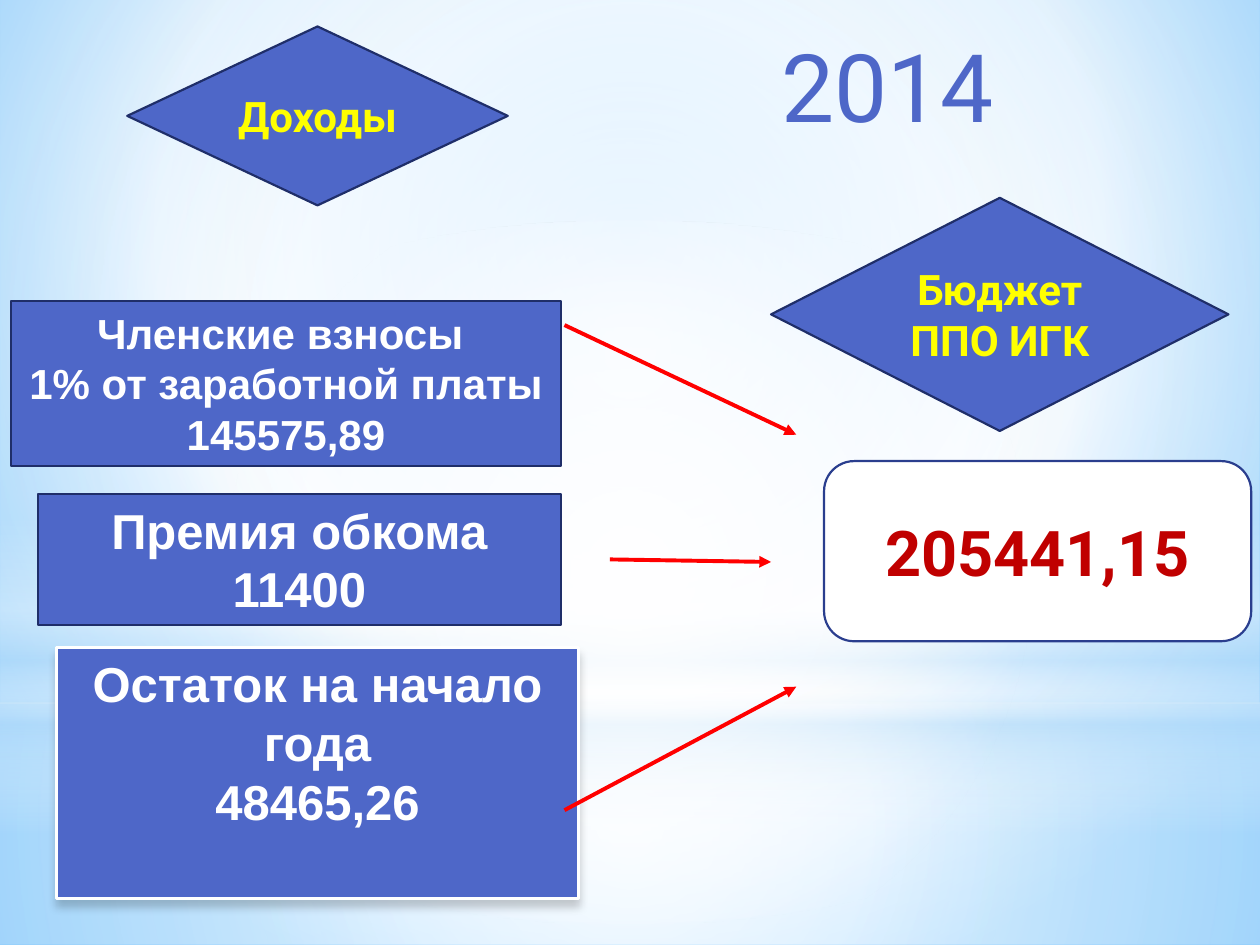
from lxml import etree
from pptx import Presentation
from pptx.dml.color import RGBColor
from pptx.enum.shapes import MSO_CONNECTOR, MSO_SHAPE as SHAPE
from pptx.enum.text import MSO_ANCHOR as ANCHOR, PP_ALIGN as ALIGN
from pptx.oxml import parse_xml
from pptx.oxml.ns import nsdecls, qn
from pptx.util import Inches, Pt

COLORS = {
    "blue": "4E67C8", "navy": "1F2E69", "edge": "2A3E8E", "white": "FFFFFF",
    "red": "FF0000", "crimson": "C00000", "yellow": "FFFF00", "black": "000000",
    "sky": "9ED5FF", "azure": "5BB9FF", "pale": "B4DCFA",
}
CENTER = (50, 50, 50, 50)

# Text formats
HEAD = dict(size=24, name="Roboto", color="yellow", bold=True)
ITEM = dict(size=28, name="Arial", color="white", bold=True)
SMALL_ITEM = {**ITEM, "size": 24}
TOTAL = dict(size=36, name="Roboto", color="crimson", bold=True)
YEAR = dict(size=54, name="Roboto", color="blue", bold=False)


class Board:
    """Slide on a grid of 100 columns by 75 rows."""

    def __init__(self, prs, cols=100, rows=75):
        self.col, self.row = prs.slide_width / cols, prs.slide_height / rows
        self.slide = prs.slides.add_slide(prs.slide_layouts[6])
        self.shapes = self.slide.shapes

    def place(self, x, y):
        return round(x * self.col), round(y * self.row)

    def box(self, x, y, w, h):
        return *self.place(x, y), *self.place(w, h)

    def rgb(self, color):
        return RGBColor.from_string(COLORS[color])

    def gradient(self, parent, stops, to=None):
        """Swap the plain fill of parent for a radial or a downward gradient."""
        gs = "".join(
            f'<a:gs pos="{pos * 1000}"><a:srgbClr val="{COLORS[color]}">'
            f'<a:alpha val="{alpha * 1000}"/></a:srgbClr></a:gs>'
            for pos, color, alpha in stops)
        if to:
            rect = " ".join(f'{side}="{v * 1000}"' for side, v in zip("ltrb", to))
            way = f'<a:path path="circle"><a:fillToRect {rect}/></a:path>'
        else:
            way = '<a:lin ang="5400000" scaled="0"/>'
        fill = parse_xml(f'<a:gradFill {nsdecls("a")} rotWithShape="1">'
                         f'<a:gsLst>{gs}</a:gsLst>{way}</a:gradFill>')
        parent.replace(parent.find(qn("a:noFill")), fill)

    def backdrop(self, stops, to):
        self.slide.background.fill.background()
        bg = next(self.slide.element.iter(qn("p:bgPr")))
        self.gradient(bg, stops, to)

    def glow(self, kind, at, stops, to=None):
        sp = self.shapes.add_shape(kind, *self.box(*at))
        sp.shadow.inherit = False
        sp.fill.background()
        sp.line.fill.background()
        self.gradient(sp.element.spPr, stops, to)

    def set_text(self, sp, lines, style, anchor):
        tf = sp.text_frame
        tf.word_wrap, tf.vertical_anchor = True, anchor
        for i, line in enumerate(lines):
            p = tf.paragraphs[0] if i == 0 else tf.add_paragraph()
            p.alignment = ALIGN.CENTER
            r = p.add_run()
            r.text = line
            r.font.color.rgb = self.rgb(style["color"])
            values = dict(size=Pt(style["size"]), name=style["name"], bold=style["bold"])
            for key, value in values.items():
                setattr(r.font, key, value)

    def card(self, kind, at, lines, style, anchor=ANCHOR.MIDDLE,
             fill="blue", line="navy", width=1.25):
        sp = self.shapes.add_shape(kind, *self.box(*at))
        sp.shadow.inherit = False
        sp.fill.solid()
        sp.fill.fore_color.rgb = self.rgb(fill)
        sp.line.color.rgb, sp.line.width = self.rgb(line), Pt(width)
        self.set_text(sp, lines, style, anchor)
        return sp

    def drop_shadow(self, sp, blur=5, dist=4, alpha=20):
        effects = sp.element.spPr.find(qn("a:effectLst"))
        effects.append(parse_xml(
            f'<a:outerShdw {nsdecls("a")} blurRad="{Pt(blur)}" dist="{Pt(dist)}" '
            f'dir="5400000" rotWithShape="0"><a:srgbClr val="{COLORS["black"]}">'
            f'<a:alpha val="{alpha * 1000}"/></a:srgbClr></a:outerShdw>'))

    def label(self, at, lines, style):
        self.set_text(self.shapes.add_textbox(*self.box(*at)), lines, style, ANCHOR.TOP)

    def arrow(self, start, end):
        cx = self.shapes.add_connector(
            MSO_CONNECTOR.STRAIGHT, *self.place(*start), *self.place(*end))
        cx.line.color.rgb, cx.line.width = self.rgb("red"), Pt(2.25)
        spPr = cx.element.spPr
        etree.SubElement(spPr.find(qn("a:ln")), qn("a:tailEnd"), type="triangle")
        etree.SubElement(spPr, qn("a:effectLst"))


def main():
    prs = Presentation()
    prs.slide_width, prs.slide_height = Inches(10), Inches(7.5)
    b = Board(prs)

    # Soft light behind everything
    b.backdrop([(0, "sky", 100), (60, "white", 100), (100, "azure", 100)],
               (20, 10, 20, 60))
    b.glow(SHAPE.RECTANGLE, (0, 55.8, 100, 19.2),
           [(0, "white", 91), (37, "white", 76), (100, "pale", 79)], CENTER)
    b.glow(SHAPE.RECTANGLE, (0, 0, 100, 55.8),
           [(0, "white", 89), (48, "white", 62), (100, "pale", 79)], CENTER)
    b.glow(SHAPE.RECTANGLE, (0, 41.2, 100, 25),
           [(0, "white", 0), (29, "white", 30), (45, "pale", 40),
            (55, "white", 26), (65, "pale", 60), (100, "white", 0)])
    b.glow(SHAPE.OVAL, (0, 17.5, 100, 55.8),
           [(0, "white", 100), (56, "white", 0)], CENTER)

    # Income items
    balance = b.card(SHAPE.RECTANGLE, (4.5, 51.4, 41.4, 19.9),
                     ["Остаток на начало года", "48465,26"], ITEM, ANCHOR.TOP,
                     line="white", width=2)
    b.drop_shadow(balance)
    b.card(SHAPE.RECTANGLE, (3, 39.2, 41.5, 10.4),
           ["Премия обкома", "11400"], ITEM, ANCHOR.TOP)
    b.card(SHAPE.RECTANGLE, (0.9, 23.9, 43.6, 13.1),
           ["Членские взносы ", "1% от заработной платы", "145575,89"],
           SMALL_ITEM, ANCHOR.TOP)

    # Headings and total
    b.card(SHAPE.FLOWCHART_DECISION, (10.1, 2.1, 30.2, 14.2), ["Доходы"], HEAD)
    b.card(SHAPE.FLOWCHART_DECISION, (61.2, 15.7, 36.3, 18.5),
           ["Бюджет ППО ИГК"], HEAD)
    b.card(SHAPE.ROUNDED_RECTANGLE, (65.4, 36.6, 33.9, 14.3),
           ["205441,15"], TOTAL, fill="white", line="edge")
    b.label((54.7, 1.7, 31.5, 10.1), ["2014"], YEAR)

    # Arrows from the items to the total
    for start, end in [((44.8, 25.8), (63.2, 34.5)),
                       ((48.4, 44.4), (61.2, 44.6)),
                       ((44.8, 64.3), (63.2, 54.5))]:
        b.arrow(start, end)

    prs.save("out.pptx")


if __name__ == "__main__":
    main()
